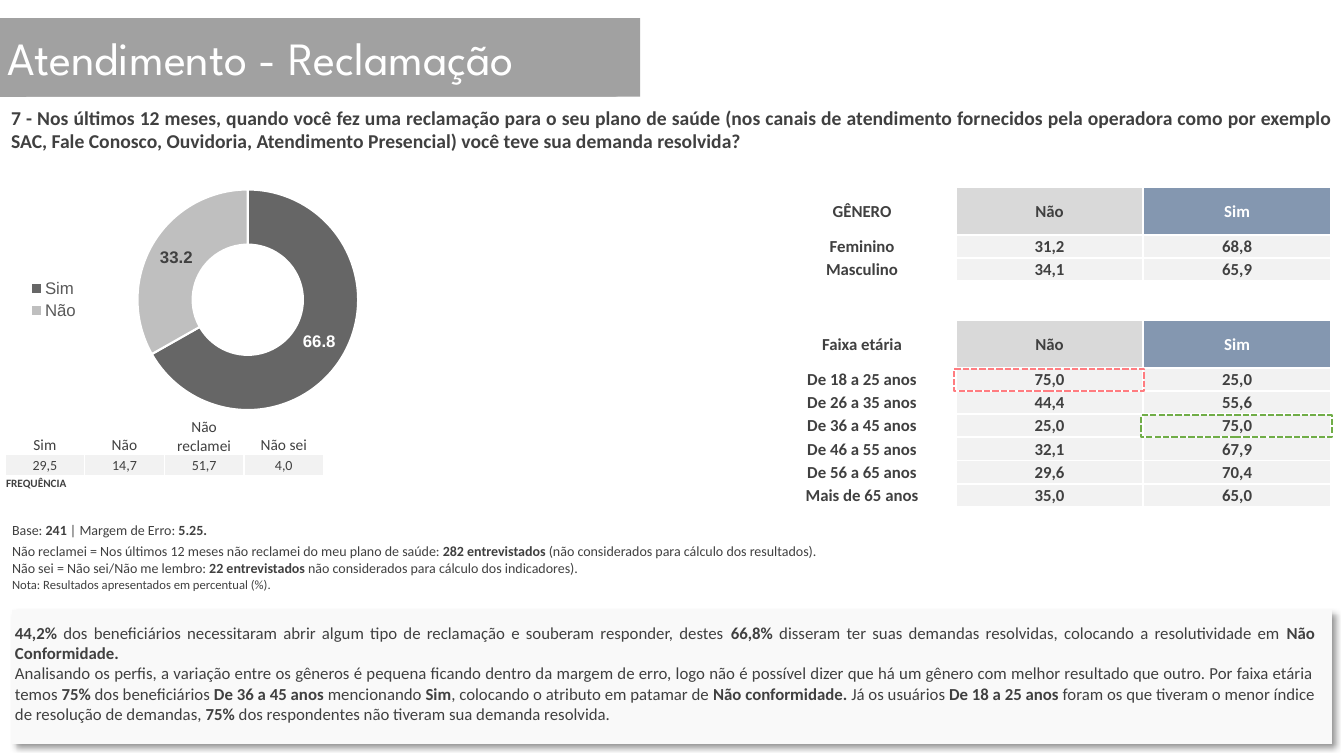
import dataclasses

import lxml.etree
import pptx
import pptx.chart.data
import pptx.dml.color
import pptx.enum.chart
import pptx.enum.dml
import pptx.enum.shapes
import pptx.enum.text
import pptx.oxml
import pptx.oxml.ns
import pptx.util

Inches, Pt = pptx.util.Inches, pptx.util.Pt
PP_ALIGN, MSO_ANCHOR = pptx.enum.text.PP_ALIGN, pptx.enum.text.MSO_ANCHOR
MSO_SHAPE = pptx.enum.shapes.MSO_SHAPE
qn = pptx.oxml.ns.qn
NS = 'xmlns:a="http://schemas.openxmlformats.org/drawingml/2006/main"'
NO_STYLE = "{2D5ABB26-0587-4C30-8999-92F81FD0307C}"


@dataclasses.dataclass(frozen=True)
class Theme:
    text: str = "404040"
    white: str = "FFFFFF"
    banner: str = "A1A1A1"
    no_head: str = "D9D9D9"
    yes_head: str = "8497B0"
    cell: str = "F2F2F2"
    panel: str = "F9F9F9"
    low: str = "FF7C80"
    high: str = "70AD47"
    yes_slice: str = "666666"
    no_slice: str = "BFBFBF"
    legend: str = "595959"
    title_font: str = "League Spartan"
    body_font: str = "Calibri"
    chart_font: str = "Arial"
    title: int = 33
    question: int = 14
    body: int = 12
    label: int = 11
    note: int = 10
    small: int = 9
    tiny: int = 8


T = Theme()
PROFILES = [
    ("GÊNERO", "Não", "Sim"),
    ("Feminino", "31,2", "68,8"),
    ("Masculino", "34,1", "65,9"),
    None,
    ("Faixa etária", "Não", "Sim"),
    ("De 18 a 25 anos", "75,0", "25,0"),
    ("De 26 a 35 anos", "44,4", "55,6"),
    ("De 36 a 45 anos", "25,0", "75,0"),
    ("De 46 a 55 anos", "32,1", "67,9"),
    ("De 56 a 65 anos", "29,6", "70,4"),
    ("Mais de 65 anos", "35,0", "65,0"),
]
FREQUENCY = [("Sim", "29,5"), ("Não", "14,7"), ("Não reclamei", "51,7"), ("Não sei", "4,0")]
QUESTION = (
    "**7 - Nos últimos 12 meses, quando você fez uma reclamação para o seu plano de saúde (nos canais de "
    "atendimento fornecidos pela operadora como por exemplo SAC, Fale Conosco, Ouvidoria, Atendimento "
    "Presencial) você teve sua demanda resolvida?**"
)
NOTES = [
    (0.21, T.note, ["Base: **241** | Margem de Erro: **5.25.**"]),
    (0.34, T.note, [
        "Não reclamei = Nos últimos 12 meses não reclamei do meu plano de saúde: **282 entrevistados **"
        "(não considerados para cálculo dos resultados).",
        "Não sei = Não sei/Não me lembro: **22 entrevistados** não considerados para cálculo dos indicadores).",
    ]),
    (0.21, T.small, ["Nota: Resultados apresentados em percentual (%)."]),
]
SUMMARY = [
    "**44,2%** dos beneficiários necessitaram abrir algum tipo de reclamação e souberam responder, destes "
    "**66,8%** disseram ter suas demandas resolvidas, colocando a resolutividade em **Não Conformidade.**",
    "Analisando os perfis, a variação entre os gêneros é pequena ficando dentro da margem de erro, logo não "
    "é possível dizer que há um gênero com melhor resultado que outro. Por faixa etária temos **75% **dos "
    "beneficiários **De 36 a 45 anos **mencionando **Sim**, colocando o atributo em patamar de **Não "
    "conformidade. **Já os usuários **De 18 a 25 anos **foram os que tiveram o menor índice de resolução de "
    "demandas, **75%** dos respondentes não tiveram sua demanda resolvida.",
]


def rgb(color):
    return pptx.dml.color.RGBColor.from_string(color)


def style(font, size, color=T.text, name=T.body_font, bold=None):
    font.size, font.name, font.bold = Pt(size), name, bold
    font.color.rgb = rgb(color)


def paint(sp, color):
    sp.fill.solid()
    sp.fill.fore_color.rgb = rgb(color)


def write(tf, paragraphs, size, color=T.text, align=PP_ALIGN.LEFT):
    """Fill a text frame; double asterisks switch bold on and off."""
    for i, text in enumerate(paragraphs):
        p = tf.paragraphs[0] if i == 0 else tf.add_paragraph()
        p.alignment = align
        style(p.font, size, color)
        for j, part in enumerate(text.split("**")):
            if part:
                r = p.add_run()
                r.text, r.font.bold = part, j % 2 == 1


def add_grid(slide, left, top, widths, heights):
    """Add an unstyled table and return it."""
    box = [Inches(v) for v in (left, top, sum(widths), sum(heights))]
    table = slide.shapes.add_table(len(heights), len(widths), *box).table
    table.first_row = table.horz_banding = False
    table._tbl.tblPr.find(qn("a:tableStyleId")).text = NO_STYLE
    for column, width in zip(table.columns, widths):
        column.width = Inches(width)
    for row, height in zip(table.rows, heights):
        row.height = Inches(height)
    return table


def fill_cell(cell, paragraphs, size, color=T.text, fill=None, border=0,
              align=PP_ALIGN.CENTER, anchor=MSO_ANCHOR.MIDDLE):
    cell.margin_left = cell.margin_right = cell.margin_top = Inches(0.01)
    cell.margin_bottom = 0
    cell.vertical_anchor = anchor
    if border:
        for side in "LRTB":
            cell._tc.get_or_add_tcPr().append(pptx.oxml.parse_xml(
                f'<a:ln{side} {NS} w="{Pt(border)}"><a:solidFill><a:srgbClr val="{T.white}"/>'
                f'</a:solidFill></a:ln{side}>'))
    if fill:
        paint(cell, fill)
    write(cell.text_frame, paragraphs, size, color, align)


def place(sp, *box):
    sp.left, sp.top, sp.width, sp.height = (Inches(v) for v in box)


def add_title(slide, left, top, width, height):
    banner = slide.shapes.add_shape(MSO_SHAPE.ROUNDED_RECTANGLE, 0, 0, 0, 0)
    place(banner, left - 0.24, top, width + 0.11, height)
    banner.shadow.inherit = False
    banner.line.fill.background()
    title = slide.shapes.title
    place(title, left, top, width, height)
    title.element.spPr.append(pptx.oxml.parse_xml(f'<a:prstGeom {NS} prst="roundRect"><a:avLst/></a:prstGeom>'))
    for sp in (banner, title):
        paint(sp, T.banner)
    slide.shapes._spTree.append(title.element)
    tf = title.text_frame
    tf.text, tf.vertical_anchor = "Atendimento - Reclamação", MSO_ANCHOR.MIDDLE
    tf.paragraphs[0].alignment = PP_ALIGN.LEFT
    style(tf.paragraphs[0].font, T.title, T.white, T.title_font)


def add_question(slide, *box):
    tf = slide.shapes.add_textbox(*(Inches(v) for v in box)).text_frame
    tf.word_wrap = True
    tf.margin_left = tf.margin_right = Inches(0.11)
    tf.margin_top = tf.margin_bottom = Inches(0.06)
    write(tf, [QUESTION], T.question, align=PP_ALIGN.JUSTIFY)


def add_notes(slide, left, top, width):
    table = add_grid(slide, left, top, [width], [height for height, _, _ in NOTES])
    for i, (_, size, paragraphs) in enumerate(NOTES):
        fill_cell(table.cell(i, 0), paragraphs, size, align=PP_ALIGN.LEFT, anchor=MSO_ANCHOR.TOP)


def add_summary(slide, left, top, width, height):
    group = slide.shapes.add_group_shape()
    panel = group.shapes.add_shape(MSO_SHAPE.RECTANGLE, *(Inches(v) for v in (left, top, width, height)))
    paint(panel, T.panel)
    panel.line.fill.background()
    panel.element.spPr.append(pptx.oxml.parse_xml(
        f'<a:effectLst {NS}><a:outerShdw blurRad="{Pt(4)}" dist="{Pt(3)}" dir="2700000" algn="tl" '
        'rotWithShape="0"><a:srgbClr val="000000"><a:alpha val="40000"/></a:srgbClr></a:outerShdw></a:effectLst>'))
    box = group.shapes.add_textbox(*(Inches(v) for v in (left - 0.07, top + 0.08, width, height - 0.22)))
    box.text_frame.word_wrap = True
    write(box.text_frame, SUMMARY, T.body, align=PP_ALIGN.JUSTIFY)


def add_profiles(slide, left, top, column):
    """Table by gender and age, with its lowest and highest scores outlined."""
    heights = [0.39 if row is None else 0.47 if row[1] == "Não" else 0.23 for row in PROFILES]
    table = add_grid(slide, left, top, [column] * 3, heights)
    for i, row in enumerate(PROFILES):
        if row is None:
            table.cell(i, 0).merge(table.cell(i, 2))
            fill_cell(table.cell(i, 0), [""], T.body, border=1.5)
            continue
        head = row[1] == "Não"
        fills = (None, T.no_head, T.yes_head) if head else (None, T.cell, T.cell)
        for j, (text, fill) in enumerate(zip(row, fills)):
            color = T.white if fill == T.yes_head else T.text
            fill_cell(table.cell(i, j), [f"**{text}**"], T.body, color, fill, border=1.5)
    for row, col, color in ((5, 1, T.low), (7, 2, T.high)):
        mark = slide.shapes.add_shape(MSO_SHAPE.RECTANGLE, 0, 0, 0, 0)
        place(mark, left + col * column - 0.02, top + sum(heights[:row]) + 0.01, column + 0.03, 0.22)
        mark.shadow.inherit = False
        mark.fill.background()
        mark.line.color.rgb, mark.line.width = rgb(color), Pt(1.5)
        mark.line.dash_style = pptx.enum.dml.MSO_LINE.SQUARE_DOT


def add_frequency(slide, left, top, column):
    table = add_grid(slide, left, top, [column] * len(FREQUENCY), [0.38, 0.21, 0.21])
    for j, (answer, share) in enumerate(FREQUENCY):
        fill_cell(table.cell(0, j), [answer], T.label, border=1, anchor=MSO_ANCHOR.BOTTOM)
        fill_cell(table.cell(1, j), [share], T.note, fill=T.cell, border=1)
    table.cell(2, 0).merge(table.cell(2, 2))
    fill_cell(table.cell(2, 0), ["**FREQUÊNCIA**"], T.tiny, border=1, align=PP_ALIGN.LEFT, anchor=MSO_ANCHOR.TOP)
    fill_cell(table.cell(2, 3), [""], T.tiny, border=1)


def add_doughnut(slide, *box):
    data = pptx.chart.data.CategoryChartData(number_format="0.0")
    data.categories = ["Sim", "Não"]
    data.add_series("Series 1", (66.8, 33.2))
    chart = slide.shapes.add_chart(
        pptx.enum.chart.XL_CHART_TYPE.DOUGHNUT, *(Inches(v) for v in box), data).chart
    style(chart.font, T.note, "000000", T.chart_font)
    chart.has_title, chart.has_legend = False, True
    chart.legend.position = pptx.enum.chart.XL_LEGEND_POSITION.LEFT
    chart.legend.include_in_layout = False
    style(chart.legend.font, T.body, T.legend, T.chart_font)
    plot = chart.plots[0]
    plot.has_data_labels = True
    labels = plot.data_labels
    labels.show_value, labels.show_percentage = True, False
    labels.number_format, labels.number_format_is_linked = "0.0", False
    style(labels.font, T.body, T.white, T.chart_font, True)
    for i, color in enumerate((T.yes_slice, T.no_slice)):
        point = plot.series[0].points[i]
        paint(point.format, color)
        point.format.line.color.rgb, point.format.line.width = rgb(T.white), Pt(1.5)
        style(point.data_label.font, T.body, (T.white, T.text)[i], T.chart_font, True)
    area = chart._chartSpace.chart.plotArea
    for old in area.findall(qn("c:layout")):
        area.remove(old)
    layout = lxml.etree.Element(qn("c:layout"))
    manual = lxml.etree.SubElement(layout, qn("c:manualLayout"))
    for tag, value in (("layoutTarget", "inner"), ("xMode", "edge"), ("yMode", "edge"),
                       ("x", "0.3"), ("y", "0.06"), ("w", "0.55"), ("h", "0.88")):
        lxml.etree.SubElement(manual, qn(f"c:{tag}")).set("val", value)
    area.insert(0, layout)


def main():
    prs = pptx.Presentation()
    prs.slide_width, prs.slide_height = Inches(13.33), Inches(7.5)
    slide = prs.slides.add_slide(prs.slide_layouts[5])
    add_title(slide, -0.03, 0.18, 6.38, 0.78)
    add_question(slide, 0, 0.99, 13.33, 0.58)
    add_notes(slide, 0.11, 5.17, 9.76)
    add_summary(slide, 0.12, 6.05, 13.09, 1.33)
    add_profiles(slide, 7.62, 1.86, 1.86)
    add_frequency(slide, 0.05, 4.13, 0.79)
    add_doughnut(slide, 0.17, 1.73, 3.98, 2.49)
    prs.save("out.pptx")


if __name__ == "__main__":
    main()
